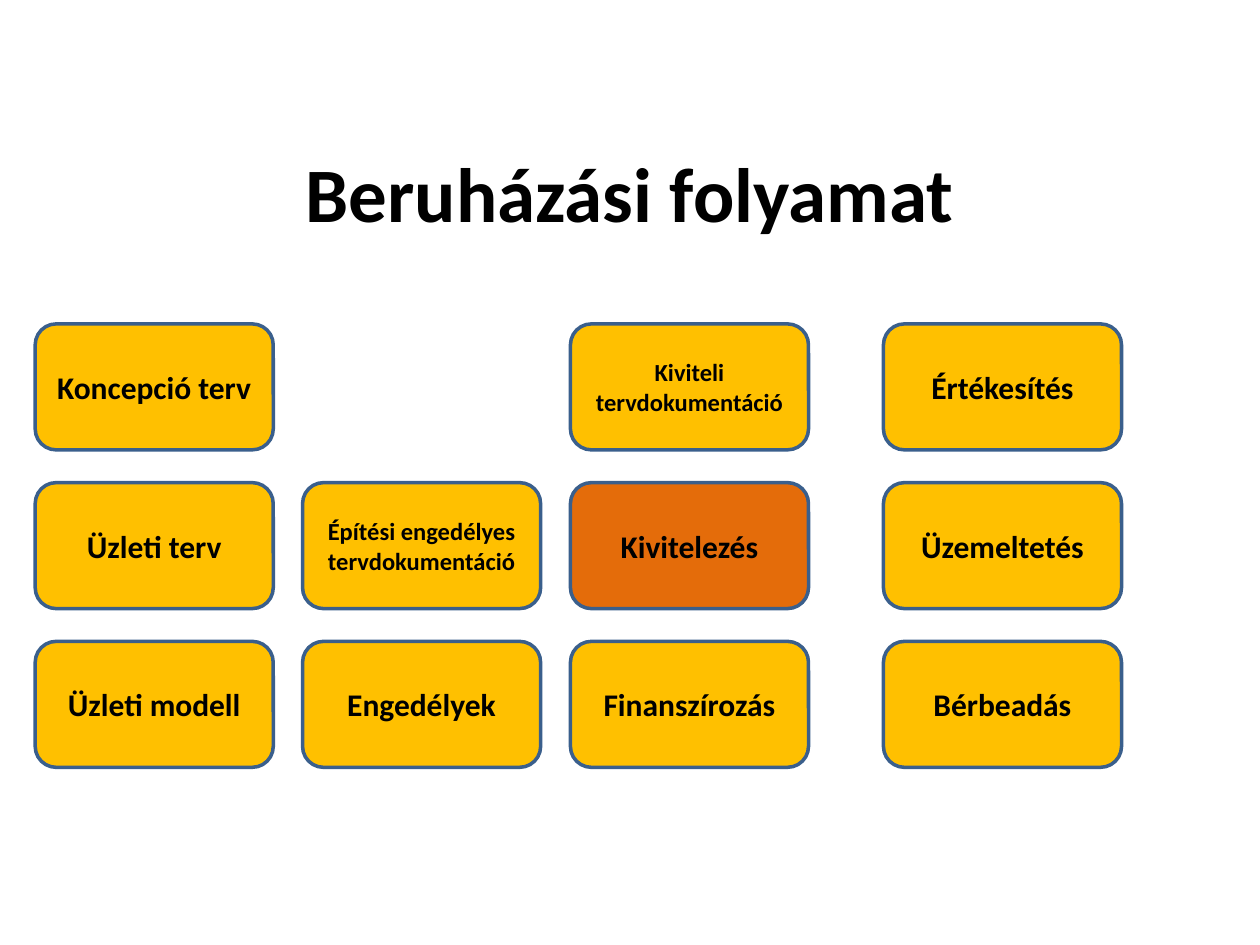
from dataclasses import dataclass

from pptx import Presentation
from pptx.dml.color import RGBColor as RGB
from pptx.enum.shapes import MSO_SHAPE as Shape
from pptx.enum.text import MSO_ANCHOR as Anchor, PP_ALIGN as Align
from pptx.util import Cm, Pt


@dataclass(frozen=True)
class Theme:
    font: str = "Calibri"
    ink: RGB = RGB(0x00, 0x00, 0x00)
    gold: RGB = RGB(0xFF, 0xC0, 0x00)
    orange: RGB = RGB(0xE4, 0x6C, 0x0A)
    edge: RGB = RGB(0x3A, 0x5F, 0x8C)
    line: Pt = Pt(2)
    title: Pt = Pt(44)
    label: Pt = Pt(18)
    small: Pt = Pt(14)


THEME = Theme()

# Box grid in cm; the last column stands further apart
WIDTH, HEIGHT = 4.8, 2.54
TOP, PITCH = 6.53, 3.2
COLUMNS = [
    (0.71, ["Koncepció terv", "Üzleti terv", "Üzleti modell"]),
    (6.1, [None, "Építési engedélyes tervdokumentáció", "Engedélyek"]),
    (11.5, ["Kiviteli tervdokumentáció", "Kivitelezés", "Finanszírozás"]),
    (17.81, ["Értékesítés", "Üzemeltetés", "Bérbeadás"]),
]
ACTIVE = "Kivitelezés"
LONG = 20  # labels above this length take the small size


def write(shape, text, size):
    """Put centred bold text in a shape."""
    frame = shape.text_frame
    frame.word_wrap = True
    frame.vertical_anchor = Anchor.MIDDLE
    para = frame.paragraphs[0]
    para.alignment = Align.CENTER
    run = para.add_run()
    run.text = text
    font = run.font
    font.name, font.size, font.bold = THEME.font, size, True
    font.color.rgb = THEME.ink


def add_title(slide, text):
    box = slide.shapes.add_textbox(Cm(1.9), Cm(1.83), Cm(21.6), Cm(4.09))
    write(box, text, THEME.title)


def add_step(slide, left, top, text):
    box = slide.shapes.add_shape(
        Shape.ROUNDED_RECTANGLE, Cm(left), Cm(top), Cm(WIDTH), Cm(HEIGHT))
    box.shadow.inherit = False
    box.fill.solid()
    box.fill.fore_color.rgb = THEME.orange if text == ACTIVE else THEME.gold
    box.line.color.rgb = THEME.edge
    box.line.width = THEME.line
    write(box, text, THEME.small if len(text) > LONG else THEME.label)


def main():
    deck = Presentation()
    deck.slide_width, deck.slide_height = Cm(25.4), Cm(19.05)
    slide = deck.slides.add_slide(deck.slide_layouts[6])

    # Heading
    add_title(slide, "Beruházási folyamat")

    # Process steps, column by column
    for left, labels in COLUMNS:
        for row, text in enumerate(labels):
            if text:
                add_step(slide, left, TOP + row * PITCH, text)

    deck.save("out.pptx")


if __name__ == "__main__":
    main()
